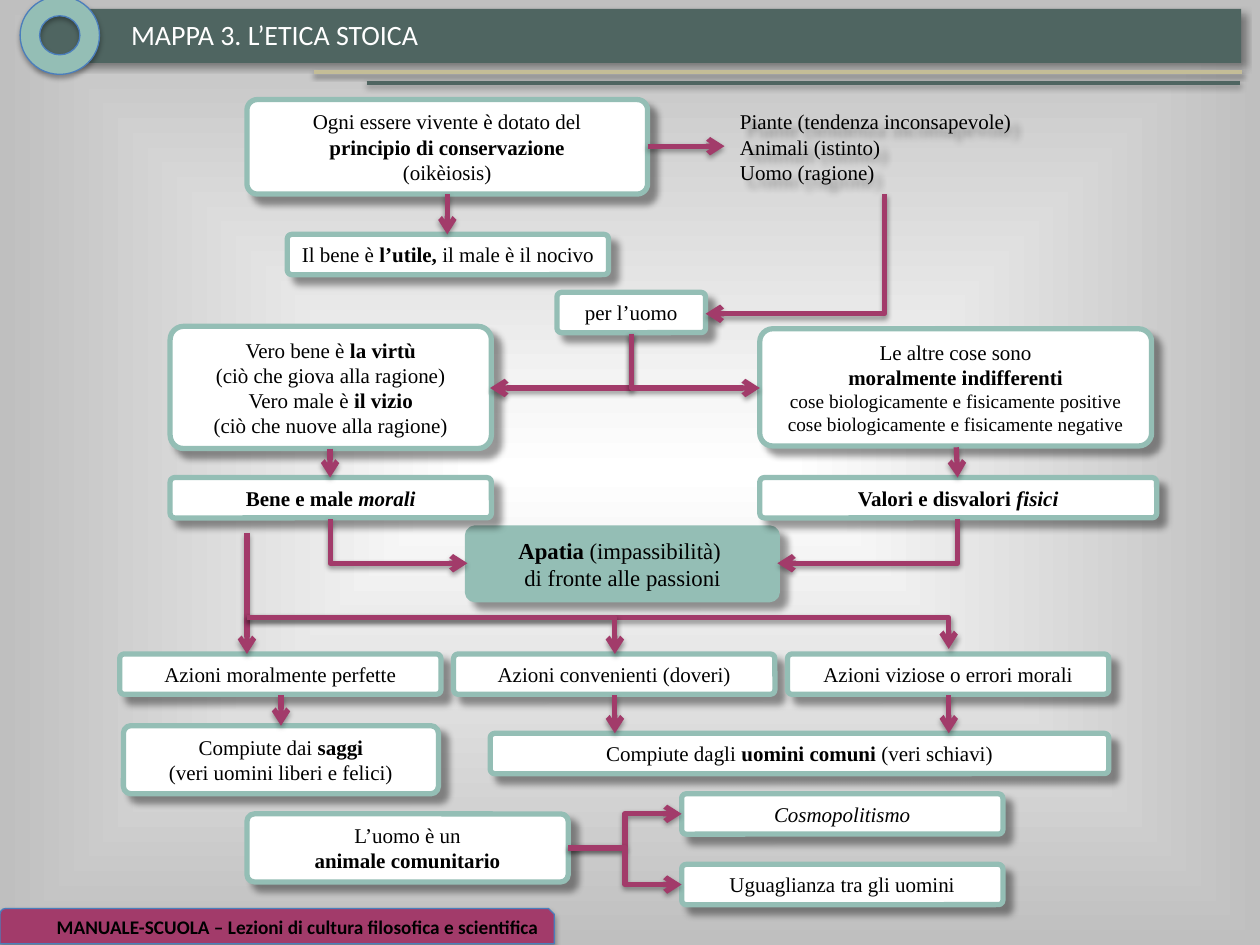
from dataclasses import dataclass

from lxml.etree import SubElement
from pptx import Presentation
from pptx.dml.color import RGBColor
from pptx.enum.shapes import MSO_CONNECTOR, MSO_SHAPE
from pptx.enum.text import MSO_ANCHOR, MSO_AUTO_SIZE, PP_ALIGN
from pptx.oxml.ns import qn
from pptx.util import Inches, Pt


@dataclass(frozen=True)
class Theme:
    black = RGBColor.from_string("000000")
    white = RGBColor.from_string("FFFFFF")
    grey = RGBColor.from_string("BFBFBF")
    slate = RGBColor.from_string("4F6561")
    sage = RGBColor.from_string("94BEB5")
    plum = RGBColor.from_string("A23B6A")
    sand = RGBColor.from_string("C4BD97")
    blue = RGBColor.from_string("4B7EBC")
    map_font = "Times New Roman"
    frame_font = "Calibri"
    title_size = Pt(16)
    key_size = Pt(13)
    text_size = Pt(12)
    small_size = Pt(11)
    map_line = Pt(3)
    rule_line = Pt(2)
    thin_line = Pt(0.75)


theme = Theme()
# Shadows: opacity in percent, blur and distance in points, direction in degrees
BOX_SHADOW = (40, 4, 6, 45)
BAR_SHADOW = (40, 4, 3, 45)
LINE_SHADOW = (38, 3.1, 1.6, 90)
BADGE_SHADOW = (35, 3.1, 1.8, 90)


def add_shadow(shape, opacity, blur, distance, direction):
    """Append an outer shadow; call after fill and line are set."""
    effects = SubElement(shape._element.spPr, qn("a:effectLst"))
    shadow = SubElement(effects, qn("a:outerShdw"), blurRad=str(Pt(blur)),
                        dist=str(Pt(distance)), dir=str(direction * 60000),
                        rotWithShape="0")
    color = SubElement(shadow, qn("a:srgbClr"), val=str(theme.black))
    SubElement(color, qn("a:alpha"), val=str(opacity * 1000))


def write_line(paragraph, text, size):
    """Write text with *bold* and _italic_ marks."""
    for i, part in enumerate(text.split("*")):
        for j, piece in enumerate(part.split("_")):
            if piece:
                run = paragraph.add_run()
                run.text = piece
                run.font.name = theme.map_font
                run.font.size = size
                run.font.color.rgb = theme.black
                run.font.bold = i % 2 == 1
                run.font.italic = j % 2 == 1


presentation = Presentation()
presentation.slide_width = Inches(10)
presentation.slide_height = Inches(7.5)
slide = presentation.slides.add_slide(presentation.slide_layouts[5])
shapes = slide.shapes

# Background: white centre fading to grey edges
background = slide.background.fill
background.gradient()
for stop, color, position in zip(background.gradient_stops,
                                 (theme.white, theme.grey), (0, 1)):
    stop.color.rgb = color
    stop.position = position
gradient = slide._element.find(".//" + qn("a:gradFill"))
gradient.remove(gradient.find(qn("a:lin")))
gradient_path = SubElement(gradient, qn("a:path"), {"path": "shape"})
SubElement(gradient_path, qn("a:fillToRect"), l="50000", t="50000", r="50000", b="50000")

# Header bar, footer band and ring
frame_shapes = [
    (MSO_SHAPE.RECTANGLE, (0.29, 0.07, 9.56, 0.43), theme.slate, False, BAR_SHADOW),
    (MSO_SHAPE.SNIP_ROUND_RECTANGLE, (0, 7.21, 4.4, 0.28), theme.plum, True, BADGE_SHADOW),
    (MSO_SHAPE.DONUT, (0.16, -0.03, 0.63, 0.62), theme.sage, True, BADGE_SHADOW),
]
for kind, place, color, outlined, shadow in frame_shapes:
    shape = shapes.add_shape(kind, *map(Inches, place))
    shape.fill.solid()
    shape.fill.fore_color.rgb = color
    if outlined:
        shape.line.color.rgb = theme.blue
        shape.line.width = theme.thin_line
    else:
        shape.line.fill.background()
    add_shadow(shape, *shadow)
    if kind == MSO_SHAPE.SNIP_ROUND_RECTANGLE:
        footer = shape

footer.text_frame.text = "MANUALE-SCUOLA – Lezioni di cultura filosofica e scientifica"
footer.text_frame.vertical_anchor = MSO_ANCHOR.MIDDLE
paragraph = footer.text_frame.paragraphs[0]
paragraph.alignment = PP_ALIGN.RIGHT
font = paragraph.runs[0].font
font.name, font.size, font.bold = theme.frame_font, theme.small_size, True
font.color.rgb = theme.black

for left, right, y, color in ((2.49, 9.86, 0.57, theme.sand),
                              (2.91, 9.84, 0.66, theme.slate)):
    rule = shapes.add_connector(MSO_CONNECTOR.STRAIGHT, Inches(left), Inches(y),
                                Inches(right), Inches(y))
    rule.line.color.rgb = color
    rule.line.width = theme.rule_line
    add_shadow(rule, *LINE_SHADOW)

title = shapes.title
title.left, title.top = Inches(0.94), Inches(0.09)
title.width, title.height = Inches(2.55), Inches(0.37)
title.text_frame.text = "MAPPA 3. L’ETICA STOICA"
title.text_frame.word_wrap = False
title.text_frame.auto_size = MSO_AUTO_SIZE.NONE
title.text_frame.vertical_anchor = MSO_ANCHOR.MIDDLE
paragraph = title.text_frame.paragraphs[0]
paragraph.alignment = PP_ALIGN.LEFT
font = paragraph.runs[0].font
font.name, font.size = theme.frame_font, theme.title_size
font.color.rgb = theme.white
title._element.getparent().append(title._element)  # in front of the header bar

# Concept boxes: place, lines of text
boxes = [
    ((3.71, 4.19, 2.46, 0.57), ["*Apatia* (impassibilità) ", "di fronte alle passioni"]),
    ((1.96, 0.79, 3.18, 0.75), ["Ogni essere vivente è dotato del",
                                "*principio di conservazione*", "(oikèiosis)"]),
    ((5.75, 0.79, 2.55, 0.75), ["Piante (tendenza inconsapevole)",
                                "Animali (istinto)", "Uomo (ragione)"]),
    ((2.28, 1.86, 2.55, 0.32), ["Il bene è *l’utile, *il male è il nocivo"]),
    ((4.42, 2.32, 1.18, 0.32), ["per l’uomo"]),
    ((1.35, 2.59, 2.55, 0.97), ["Vero bene è *la virtù*", "(ciò che giova alla ragione)",
                                "Vero male è *il vizio*", "(ciò che nuove alla ragione)"]),
    ((6.03, 2.61, 3.11, 0.93), ["Le altre cose sono", "*moralmente indifferenti*",
                                "cose biologicamente e fisicamente positive",
                                "cose biologicamente e fisicamente negative"]),
    ((1.35, 3.79, 2.55, 0.32), ["*Bene e male _morali_*"]),
    ((6.03, 3.79, 3.15, 0.32), ["*Valori e disvalori _fisici_*"]),
    ((0.95, 5.19, 2.55, 0.32), ["Azioni moralmente perfette"]),
    ((3.6, 5.19, 2.55, 0.32), ["Azioni convenienti (doveri)"]),
    ((6.25, 5.19, 2.55, 0.32), ["Azioni viziose o errori morali"]),
    ((0.98, 5.76, 2.5, 0.54), ["Compiute dai *saggi*", "(veri uomini liberi e felici)"]),
    ((3.89, 5.82, 4.91, 0.32), ["Compiute dagli *uomini comuni *(veri schiavi)"]),
    ((1.96, 6.46, 2.55, 0.54), ["L’uomo è un", "*animale comunitario*"]),
    ((5.41, 6.3, 2.55, 0.32), ["_Cosmopolitismo_"]),
    ((5.41, 6.86, 2.55, 0.32), ["Uguaglianza tra gli uomini"]),
]
for place, lines in boxes:
    is_key = lines[0].startswith("*Apatia")
    is_plain = lines[0].startswith("Piante")
    box = shapes.add_shape(MSO_SHAPE.ROUNDED_RECTANGLE, *map(Inches, place))
    box.adjustments[0] = 0.11
    if is_plain:
        box.fill.background()
        box.line.fill.background()
    else:
        box.fill.solid()
        box.fill.fore_color.rgb = theme.sage if is_key else theme.white
        box.line.color.rgb = theme.sage
        box.line.width = theme.map_line
    add_shadow(box, *BOX_SHADOW)
    text_frame = box.text_frame
    text_frame.word_wrap = True
    text_frame.auto_size = MSO_AUTO_SIZE.SHAPE_TO_FIT_TEXT
    text_frame.vertical_anchor = MSO_ANCHOR.MIDDLE
    for index, line in enumerate(lines):
        paragraph = text_frame.add_paragraph() if index else text_frame.paragraphs[0]
        paragraph.alignment = PP_ALIGN.LEFT if is_plain else PP_ALIGN.CENTER
        size = theme.key_size if is_key else theme.text_size
        write_line(paragraph, line, theme.small_size if line.startswith("cose") else size)

# Arrows: route, start, end ("down" and "across" name the first leg of a corner)
arrows = [
    ("straight", 3.55, 1.54, 3.55, 1.86), ("straight", 5.14, 1.16, 5.75, 1.16),
    ("down", 7.02, 1.54, 5.6, 2.49),
    ("down", 5.01, 2.65, 3.89, 3.08), ("down", 5.01, 2.65, 6.03, 3.08),
    ("down", 7.6, 4.12, 6.17, 4.47), ("down", 2.62, 4.12, 3.71, 4.47),
    ("straight", 2.62, 3.56, 2.62, 3.79), ("straight", 7.59, 3.55, 7.6, 3.79),
    ("straight", 1.96, 4.23, 1.96, 5.19),
    ("across", 1.96, 4.9, 7.53, 5.15), ("across", 1.96, 4.9, 4.88, 5.19),
    ("straight", 2.23, 5.52, 2.23, 5.76),
    ("straight", 4.88, 5.52, 4.88, 5.82), ("straight", 7.53, 5.52, 7.53, 5.82),
    ("step", 4.51, 6.73, 5.41, 6.46), ("step", 4.51, 6.73, 5.41, 7.02),
]
for route, x1, y1, x2, y2 in arrows:
    ends = (x1, y1, x2, y2)
    if route == "down":  # a corner laid on its side, then turned about its centre
        center_x, center_y = (x1 + x2) / 2, (y1 + y2) / 2
        half_width, half_height = (y2 - y1) / 2, abs(x2 - x1) / 2
        ends = (center_x - half_width, center_y - half_height,
                center_x + half_width, center_y + half_height)
    kind = MSO_CONNECTOR.STRAIGHT if route == "straight" else MSO_CONNECTOR.ELBOW
    arrow = shapes.add_connector(kind, *map(Inches, ends))
    properties = arrow._element.spPr
    if route in ("down", "across"):
        properties.find(qn("a:prstGeom")).set("prst", "bentConnector2")
    if route == "down":
        turn = properties.find(qn("a:xfrm"))
        turn.set("rot", str((90 if x2 < x1 else 270) * 60000))
        if x2 > x1:
            turn.set("flipH", "1")
    arrow.line.color.rgb = theme.plum
    arrow.line.width = theme.map_line
    SubElement(properties.find(qn("a:ln")), qn("a:tailEnd"), type="arrow")
    add_shadow(arrow, *LINE_SHADOW)

presentation.save("out.pptx")
